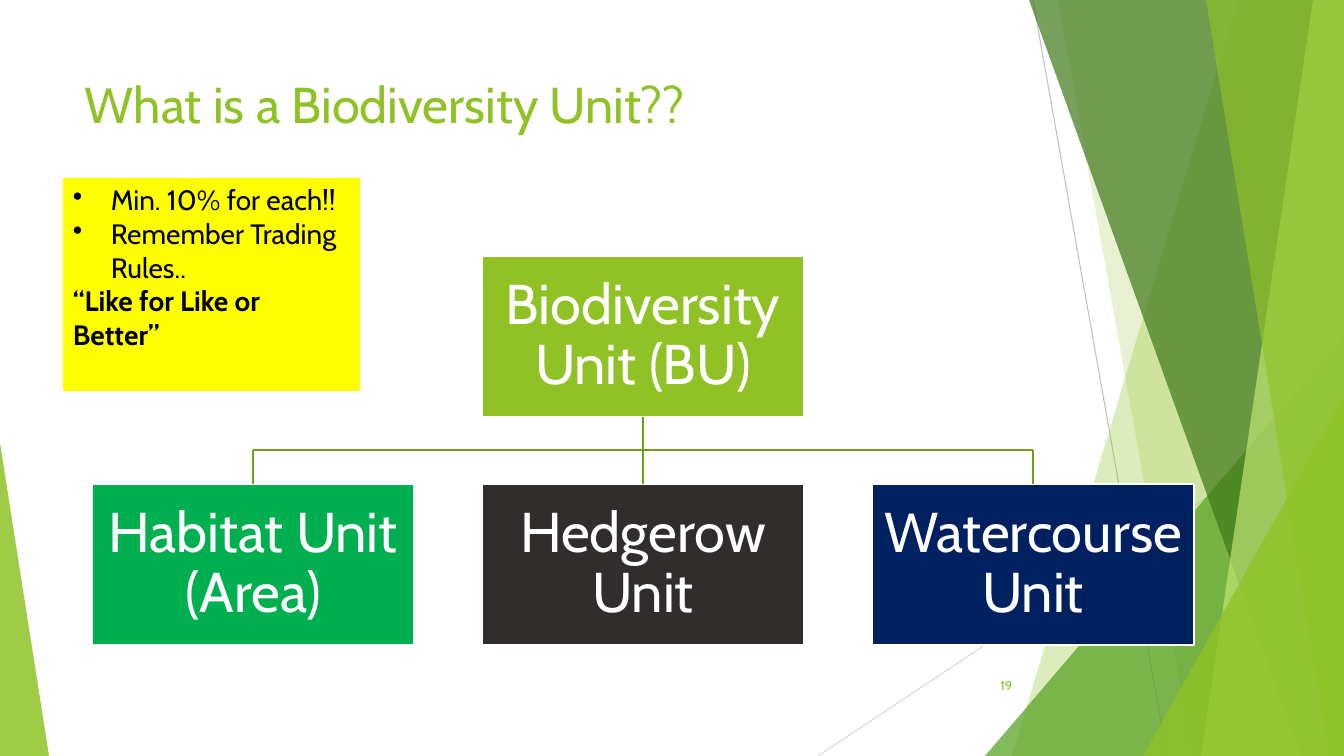
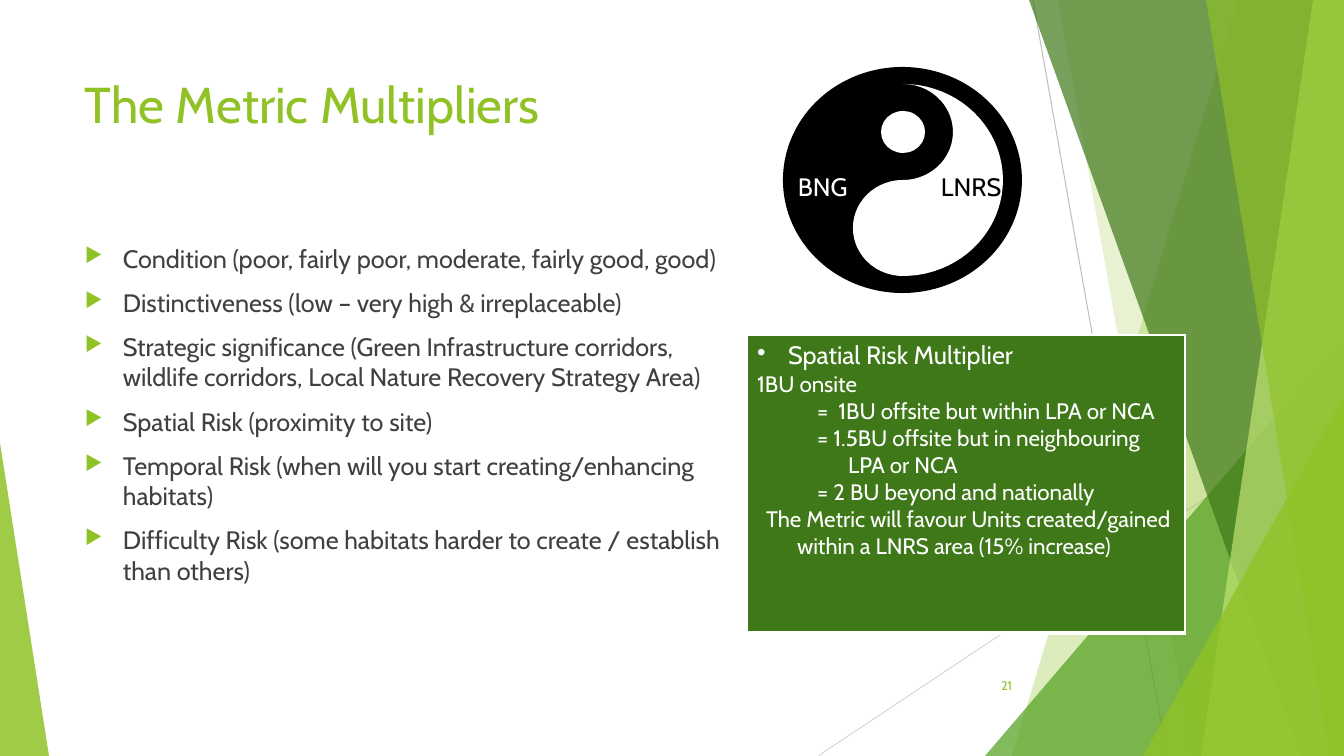
import math

import lxml.etree
import pptx
import pptx.dml.color
import pptx.enum.shapes
import pptx.enum.text
import pptx.oxml.ns
import pptx.util

PX = 9071
FONT = "Cabin"
GREEN, DARK, WHITE, BLACK = "90C226", "3F7819", "FFFFFF", "000000"
rgb = pptx.dml.color.RGBColor.from_string
qn = pptx.oxml.ns.qn
SubElement = lxml.etree.SubElement
SHAPE = pptx.enum.shapes.MSO_SHAPE
STRAIGHT = pptx.enum.shapes.MSO_CONNECTOR.STRAIGHT
ALIGN = pptx.enum.text.PP_ALIGN
ANCHOR = pptx.enum.text.MSO_ANCHOR


def paint(sp, fill, line=None, alpha=100):
    sp.shadow.inherit = False
    sp.fill.solid()
    sp.fill.fore_color.rgb = rgb(fill)
    if alpha < 100:
        clr = sp._element.spPr.find(qn("a:solidFill")).find(qn("a:srgbClr"))
        SubElement(clr, qn("a:alpha"), val=str(alpha * 1000))
    if line:
        sp.line.color.rgb = rgb(line)
        sp.line.width = pptx.util.Pt(1.5)
    else:
        sp.line.fill.background()


def write(tf, lines, color, size, para=None, **frame):
    for key, value in {"word_wrap": True, **frame}.items():
        setattr(tf, key, value)
    for i, (text, own) in enumerate(lines):
        fmt = {"left": 0, "hang": 0, "bullet": None, "size": size, "bold": False, "para": para or {}, **own}
        p = tf.add_paragraph() if i else tf.paragraphs[0]
        pPr = p._p.get_or_add_pPr()
        pPr.set("marL", str(fmt["left"] * PX))
        pPr.set("indent", str(-fmt["hang"] * PX))
        if fmt["bullet"] == "▶":
            clr = SubElement(pPr, qn("a:buClr"))
            SubElement(clr, qn("a:srgbClr"), val=GREEN)
            SubElement(pPr, qn("a:buSzPct"), val="80000")
        if fmt["bullet"]:
            SubElement(pPr, qn("a:buChar"), char=fmt["bullet"])
        else:
            SubElement(pPr, qn("a:buNone"))
        for key, value in fmt["para"].items():
            if i or key != "space_before":
                setattr(p, key, value)
        r = p.add_run()
        r.text = text
        font = {"name": FONT, "size": pptx.util.Pt(fmt["size"]), "bold": fmt["bold"]}
        for key, value in font.items():
            setattr(r.font, key, value)
        r.font.color.rgb = rgb(color)


prs = pptx.Presentation()
prs.slide_width, prs.slide_height = 1344 * PX, 756 * PX

rays = [((1033, 0, 1167, 756), "BFBFBF"), ((1344, 406, 818, 756), "D9D9D9")]
panels = [
    ("band", (1238, 1012), GREEN, 30),
    ("band", (1058, 1193), GREEN, 20),
    ("triangle", (985, 336, 359, 1), "54A021", 72),
    ("band", (1029, 1301), DARK, 70),
    ("band", (1313, 1201), "C0E474", 70),
    ("band", (1206, 1329), GREEN, 65),
    ("triangle", (1143, 396, 201, 1), GREEN, 80),
    ("triangle", (0, 443, 49, 0), GREEN, 85),
]

slides = []
for title, number in [("What is a Biodiversity Unit??", "19"), ("The Metric Multipliers", "21")]:
    s = prs.slides.add_slide(prs.slide_layouts[6])
    slides.append(s)
    for ends, color in rays:
        ray = s.shapes.add_connector(STRAIGHT, *(v * PX for v in ends))
        ray.line.color.rgb = rgb(color)
        ray.line.width = pptx.util.Pt(0.75)
        SubElement(ray._element.spPr, qn("a:effectLst"))
    for kind, place, color, alpha in panels:
        if kind == "band":
            top, bottom = place
            fb = s.shapes.build_freeform(top, 0, scale=PX)
            fb.add_line_segments([(1344, 0), (1344, 756), (bottom, 756)])
            sp = fb.convert_to_shape()
        else:
            x, y, w, apex = place
            sp = s.shapes.add_shape(SHAPE.ISOSCELES_TRIANGLE, x * PX, y * PX, w * PX, (756 - y) * PX)
            sp.adjustments[0] = apex
        paint(sp, color, alpha=alpha)
    tb = s.shapes.add_textbox(*(v * PX for v in (75, 68, 948, 145)))
    write(tb.text_frame, [(title, {})], GREEN, 36)
    tb = s.shapes.add_textbox(*(v * PX for v in (946, 666, 76, 40)))
    write(tb.text_frame, [(number, {})], GREEN, 9, {"alignment": ALIGN.RIGHT}, vertical_anchor=ANCHOR.MIDDLE)

s = slides[0]
BOX_W, BOX_H, PITCH = 322, 161, 390
ROOT_Y, UNIT_Y, LEFT = 256, 484, 92
BAR_Y = (ROOT_Y + BOX_H + UNIT_Y) // 2
units = [
    ("Biodiversity Unit (BU)", 1, ROOT_Y, GREEN),
    ("Habitat Unit (Area)", 0, UNIT_Y, "00B050"),
    ("Hedgerow Unit", 1, UNIT_Y, "302D2C"),
    ("Watercourse Unit", 2, UNIT_Y, "002060"),
]
margins = {f"margin_{side}": 3 * PX for side in ("left", "top", "right", "bottom")}
boxes = []
for text, col, y, color in units:
    sp = s.shapes.add_shape(SHAPE.RECTANGLE, (LEFT + col * PITCH) * PX, y * PX, BOX_W * PX, BOX_H * PX)
    paint(sp, color, WHITE)
    write(sp.text_frame, [(text, {})], WHITE, 40, {"alignment": ALIGN.CENTER, "line_spacing": 0.9},
          vertical_anchor=ANCHOR.MIDDLE, **margins)
    boxes.append(sp)

root, habitat, hedgerow, watercourse = boxes
first, middle, last = (LEFT + BOX_W // 2 + col * PITCH for col in range(3))
branches = [
    ((middle, ROOT_Y + BOX_H, middle, UNIT_Y), root, hedgerow),
    ((first, BAR_Y, last, BAR_Y), None, None),
    ((first, BAR_Y, first, UNIT_Y), None, habitat),
    ((last, BAR_Y, last, UNIT_Y), None, watercourse),
]
for ends, start, end in branches:
    branch = s.shapes.add_connector(STRAIGHT, *(v * PX for v in ends))
    branch.line.color.rgb = rgb("739B1E")
    branch.line.width = pptx.util.Pt(1.5)
    SubElement(branch._element.spPr, qn("a:effectLst"))
    if start:
        branch.begin_connect(start, 2)
    if end:
        branch.end_connect(end, 0)

note = s.shapes.add_shape(SHAPE.RECTANGLE, *(v * PX for v in (63, 178, 297, 213)))
paint(note, "FFFF00")
dot = {"left": 38, "hang": 38, "bullet": "•"}
write(note.text_frame, [
    ("Min. 10% for each!!", dot),
    ("Remember Trading Rules..", dot),
    ("“Like for Like or Better”", {"bold": True}),
], BLACK, 20, {"alignment": ALIGN.LEFT}, vertical_anchor=ANCHOR.TOP)

s = slides[1]
arrow = {"left": 38, "hang": 38, "bullet": "▶"}
multipliers = [
    "Condition (poor, fairly poor, moderate, fairly good, good)",
    "Distinctiveness (low – very high & irreplaceable)",
    "Strategic significance (Green Infrastructure corridors, wildlife corridors, Local Nature Recovery Strategy Area)",
    "Spatial Risk (proximity to site)",
    "Temporal Risk (when will you start creating/enhancing habitats)",
    "Difficulty Risk (some habitats harder to create / establish than others)",
]
tb = s.shapes.add_textbox(*(v * PX for v in (75, 238, 658, 427)))
write(tb.text_frame, [(text, arrow) for text in multipliers], "404040", 18, {"space_before": pptx.util.Pt(10)})

CX, CY, RX, RY = 903, 180, 100, 96
disc = s.shapes.add_shape(SHAPE.OVAL, *(v * PX for v in (783, 67, 239, 226)))
paint(disc, BLACK)
arcs = [
    (CY, RX, RY, -90, 90),
    (CY + RY // 2, RX // 2, RY // 2, 90, 270),
    (CY - RY // 2, RX // 2, RY // 2, 90, -90),
]
outline = []
for cy, rx, ry, start, end in arcs:
    for i in range(41):
        t = math.radians(start + (end - start) * i / 40)
        outline.append(((CX + rx * math.cos(t)) * PX, (cy + ry * math.sin(t)) * PX))
fb = s.shapes.build_freeform(*outline[0])
fb.add_line_segments(outline[1:])
paint(fb.convert_to_shape(), WHITE)
eye = s.shapes.add_shape(SHAPE.OVAL, *(v * PX for v in (CX - 22, CY - RY // 2 - 21, 44, 42)))
paint(eye, WHITE)
for text, x, color in [("LNRS", 931, BLACK), ("BNG", 788, WHITE)]:
    tb = s.shapes.add_textbox(*(v * PX for v in (x, 166, 84, 40)))
    write(tb.text_frame, [(text, {})], color, 18, word_wrap=False)

table = s.shapes.add_table(1, 1, *(v * PX for v in (747, 335, 438, 298))).table
for key in ("first_row", "horz_banding"):
    setattr(table, key, False)
cell = table.cell(0, 0)
cell.fill.solid()
cell.fill.fore_color.rgb = rgb(DARK)
tcPr = cell._tc.get_or_add_tcPr()
for i, (side, width) in enumerate([("L", 1), ("R", 1), ("T", 1), ("B", 3)]):
    ln = lxml.etree.Element(qn(f"a:ln{side}"), w=str(pptx.util.Pt(width)))
    SubElement(SubElement(ln, qn("a:solidFill")), qn("a:srgbClr"), val=WHITE)
    tcPr.insert(i, ln)
offset = {"left": 91, "hang": 31}
write(cell.text_frame, [
    ("Spatial Risk Multiplier", {"left": 31, "hang": 31, "bullet": "•", "size": 18}),
    ("1BU onsite", {}),
    ("=  1BU offsite but within LPA or NCA", offset),
    ("= 1.5BU offsite but in neighbouring LPA or NCA", offset),
    ("= 2 BU beyond and nationally", offset),
    ("The Metric will favour Units created/gained within a LNRS area (15% increase)", {"left": 40, "hang": 31}),
], WHITE, 16)

prs.save("out.pptx")
